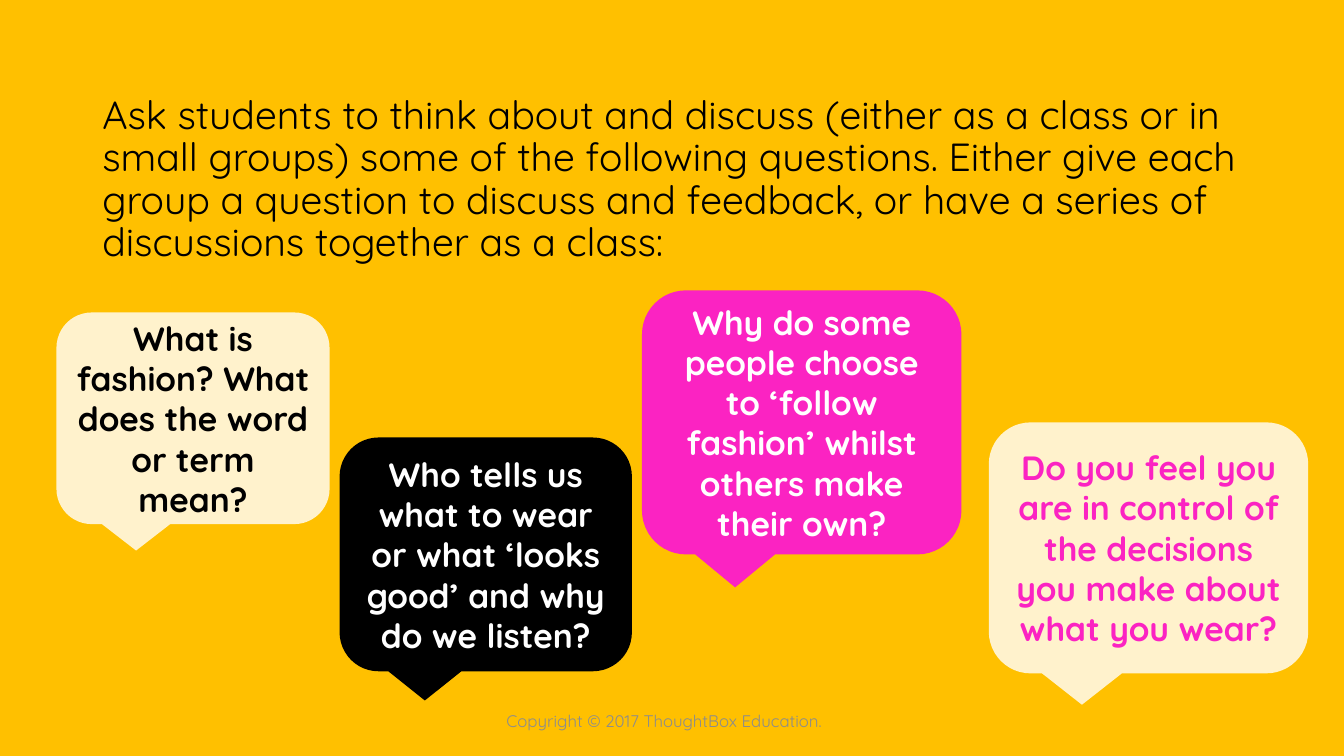
from pptx import Presentation
from pptx.dml.color import RGBColor
from pptx.enum.shapes import MSO_SHAPE
from pptx.enum.text import MSO_ANCHOR, PP_ALIGN
from pptx.util import Pt

CALLOUT = MSO_SHAPE.ROUNDED_RECTANGULAR_CALLOUT
TOP, MIDDLE = MSO_ANCHOR.TOP, MSO_ANCHOR.MIDDLE
LEFT, CENTER = PP_ALIGN.LEFT, PP_ALIGN.CENTER

AMBER = RGBColor(0xFF, 0xC0, 0x00)
CREAM = RGBColor(0xFF, 0xF2, 0xCC)
PINK = RGBColor(0xFB, 0x23, 0xC2)
BLACK = RGBColor(0x00, 0x00, 0x00)
WHITE = RGBColor(0xFF, 0xFF, 0xFF)
GREY = RGBColor(0x8C, 0x8C, 0x8C)

FONT = "Quicksand"
INTRO = (
    "Ask students to think about and discuss (either as a class or in small groups) "
    "some of the following questions. Either give each group a question to discuss and "
    "feedback, or have a series of discussions together as a class:"
)
QUESTIONS = [
    ("What is fashion? What does the word or term mean?",
     (40.3, 223.2, 195.1, 151.2), CREAM, BLACK),
    ("Who tells us what to wear or what ‘looks good’ and why do we listen?",
     (242.6, 312.5, 208.8, 167), BLACK, WHITE),
    ("Why do some people choose to ‘follow fashion’ whilst others make their own?",
     (458.6, 207.4, 228.2, 188.6), PINK, WHITE),
    ("Do you feel you are in control of the decisions you make about what you wear?",
     (706.3, 301.7, 228.2, 179.3), CREAM, PINK),
]


def write_text(shape, text, size, color, bold=False, align=CENTER, anchor=MIDDLE, spacing=1.0):
    """Fill a shape with one formatted paragraph."""
    frame = shape.text_frame
    frame.word_wrap = True
    frame.vertical_anchor = anchor
    para = frame.paragraphs[0]
    para.alignment = align
    para.line_spacing = spacing
    span = para.add_run()
    span.text = text
    span.font.name = FONT
    span.font.size = Pt(size)
    span.font.bold = bold
    span.font.color.rgb = color


def add_intro(page, box):
    """Place the instructions for the class."""
    shape = page.shapes.add_textbox(*map(Pt, box))
    write_text(shape, INTRO, 28, BLACK, align=LEFT, anchor=TOP, spacing=0.9)


def add_footer(page, box):
    """Place the copyright line, set slightly left of centre."""
    shape = page.shapes.add_textbox(*map(Pt, box))
    shape.text_frame.margin_right = Pt(18)
    write_text(shape, "Copyright © 2017 ThoughtBox Education.", 12, GREY)


def add_question(page, text, box, fill, color):
    """Place one question in a speech bubble."""
    bubble = page.shapes.add_shape(CALLOUT, *map(Pt, box))
    bubble.shadow.inherit = False
    bubble.fill.solid()
    bubble.fill.fore_color.rgb = fill
    bubble.line.fill.background()
    write_text(bubble, text, 24, color, bold=True)


def build_discussion(deck):
    """Build the discussion slide."""
    page = deck.slides.add_slide(deck.slide_layouts[6])
    page.background.fill.solid()
    page.background.fill.fore_color.rgb = AMBER
    add_intro(page, (66, 64.8, 828, 387))
    add_footer(page, (318, 500.4, 324, 28.8))
    for question in QUESTIONS:
        add_question(page, *question)


def main():
    """Create and save the deck."""
    deck = Presentation()
    deck.slide_width, deck.slide_height = Pt(960), Pt(540)
    build_discussion(deck)
    deck.save("out.pptx")


if __name__ == "__main__":
    main()
